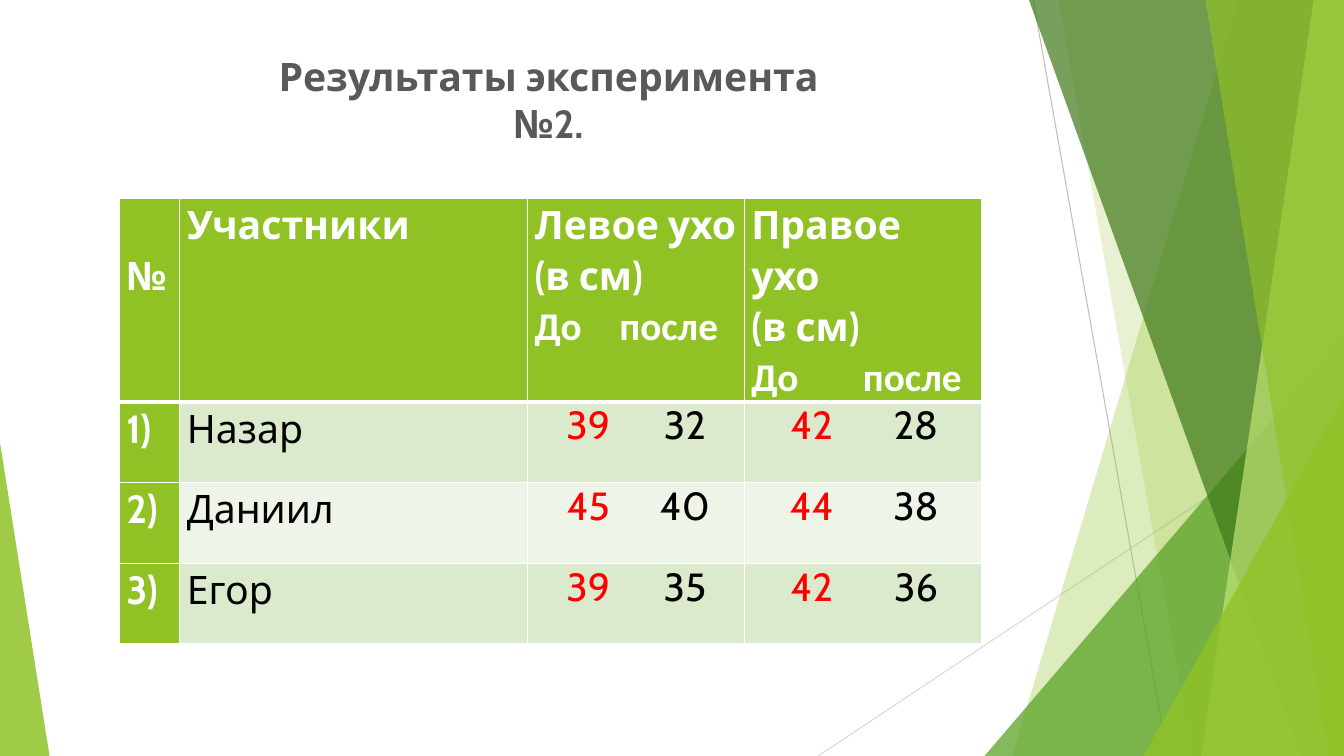
from lxml.etree import SubElement
from pptx import Presentation
from pptx.dml.color import RGBColor
from pptx.enum.shapes import MSO_CONNECTOR, MSO_SHAPE
from pptx.enum.text import PP_ALIGN
from pptx.oxml.ns import qn
from pptx.util import Inches, Pt

COLS, ROWS = 160, 90
UNIT = Inches(1) / 12

WHITE = RGBColor(0xFF, 0xFF, 0xFF)
BLACK = RGBColor(0x00, 0x00, 0x00)
RED = RGBColor(0xFF, 0x00, 0x00)
TITLE_GREY = RGBColor(0x59, 0x59, 0x59)
LINE_GREY = RGBColor(0xBF, 0xBF, 0xBF)
PALE_GREY = RGBColor(0xD9, 0xD9, 0xD9)
LIME = RGBColor(0x90, 0xC2, 0x26)
GREEN = RGBColor(0x54, 0xA0, 0x21)
DARK_GREEN = RGBColor(0x3F, 0x78, 0x19)
LIGHT_LIME = RGBColor(0xC0, 0xE4, 0x74)
BAND_DARK = RGBColor(0xDB, 0xE9, 0xCD)
BAND_LIGHT = RGBColor(0xEE, 0xF4, 0xE8)

TABLE_COLS = (7.2, 41.4, 25.8, 28.2)
TABLE_ROWS = (22, 9.6, 9.6, 9.6)
EARS = (
    ("Левое ухо", 10.1, (6.4, 17.9)),
    ("Правое ухо", 13.3, (7.2, 19.6)),
)
RESULTS = (
    ("Назар", (39, 32), (42, 28)),
    ("Даниил", (45, 40), (44, 38)),
    ("Егор", (39, 35), (42, 36)),
)


def grid(*units):
    """Turn grid units into slide lengths."""
    return [round(n * UNIT) for n in units]


def paint(sp, color, opacity):
    """Give a shape a translucent fill without line or shadow."""
    sp.shadow.inherit = False
    sp.line.fill.background()
    sp.fill.solid()
    sp.fill.fore_color.rgb = color
    clr = sp.fill._xPr.find(qn("a:solidFill"))[0]
    SubElement(clr, qn("a:alpha"), val=str(opacity * 1000))


def add_line(s, ends, color):
    """Draw a thin straight line."""
    line = s.shapes.add_connector(MSO_CONNECTOR.STRAIGHT, *grid(*ends))
    line.line.color.rgb = color
    line.line.width = Pt(0.75)
    SubElement(line._element.spPr, qn("a:effectLst"))


def add_facet(s, top_x, bottom_x, color, opacity):
    """Fill the area right of a slanted full-height edge."""
    builder = s.shapes.build_freeform(*grid(top_x, 0), scale=1.0)
    corners = ((COLS, 0), (COLS, ROWS), (bottom_x, ROWS))
    builder.add_line_segments([grid(*c) for c in corners], close=True)
    paint(builder.convert_to_shape(), color, opacity)


def add_triangle(s, left, top, right, apex, color, opacity):
    """Draw a right triangle standing on the slide's bottom edge."""
    box = grid(left, top, right - left, ROWS - top)
    sp = s.shapes.add_shape(MSO_SHAPE.ISOSCELES_TRIANGLE, *box)
    sp.adjustments[0] = apex
    paint(sp, color, opacity)


def add_run(p, text, color, bold=False, font="Cabin"):
    """Append one formatted run."""
    r = p.add_run()
    r.text = text
    r.font.size = Pt(28)
    r.font.name = font
    r.font.bold = bold
    r.font.color.rgb = color


def add_tabs(p, stops, align):
    """Set tab stops on a paragraph."""
    tabs = SubElement(p._p.get_or_add_pPr(), qn("a:tabLst"))
    for pos in grid(*stops):
        SubElement(tabs, qn("a:tab"), pos=str(pos), algn=align)


def style_cell(cell, color, bottom=1):
    """Set a cell's margins, white borders and fill."""
    cell.margin_left = cell.margin_right = Inches(0.07)
    cell.margin_top = cell.margin_bottom = 0
    tc_pr = cell._tc.get_or_add_tcPr()
    for side, width in (("L", 1), ("R", 1), ("T", 1), ("B", bottom)):
        ln = SubElement(tc_pr, qn(f"a:ln{side}"), w=str(Pt(width)))
        fill = SubElement(ln, qn("a:solidFill"))
        SubElement(fill, qn("a:srgbClr"), val=str(WHITE))
    cell.fill.solid()
    cell.fill.fore_color.rgb = color


def write_label(cell, text, color, bold):
    """Write a single label into a cell."""
    p = cell.text_frame.paragraphs[0]
    p.line_spacing = 1.07
    add_run(p, text, color, bold)


def write_ear_header(cell, ear, after_stop):
    """Write an ear heading with its before and after captions."""
    tf = cell.text_frame
    write_label(cell, ear, WHITE, True)
    for text, font in (("(в см)", "Cabin"), ("До\tпосле", "Calibri")):
        p = tf.add_paragraph()
        p.line_spacing = 1.07
        add_run(p, text, WHITE, True, font)
    add_tabs(p, [after_stop], "l")


def write_pair(cell, values, stops):
    """Write the before and after values centred on their tab stops."""
    p = cell.text_frame.paragraphs[0]
    add_tabs(p, stops, "ctr")
    for value, color in zip(values, (RED, BLACK)):
        add_run(p, f"\t{value}", color)


def add_results(s):
    """Build the results table."""
    box = grid(14.2, 23.6, sum(TABLE_COLS), sum(TABLE_ROWS))
    table = s.shapes.add_table(len(TABLE_ROWS), len(TABLE_COLS), *box).table
    for col, width in zip(table.columns, grid(*TABLE_COLS)):
        col.width = width
    for row, height in zip(table.rows, grid(*TABLE_ROWS)):
        row.height = height

    for i in range(len(TABLE_COLS)):
        style_cell(table.cell(0, i), LIME, bottom=3)
    write_label(table.cell(0, 0), "№", WHITE, True)
    table.cell(0, 0).margin_top = Inches(0.51)
    write_label(table.cell(0, 1), "Участники", WHITE, True)
    for i, (ear, after_stop, _) in enumerate(EARS, 2):
        write_ear_header(table.cell(0, i), ear, after_stop)

    for n, (name, *pairs) in enumerate(RESULTS, 1):
        band = BAND_DARK if n % 2 else BAND_LIGHT
        for i in range(len(TABLE_COLS)):
            style_cell(table.cell(n, i), band if i else LIME)
        write_label(table.cell(n, 0), f"{n})", WHITE, True)
        write_label(table.cell(n, 1), name, BLACK, False)
        for i, (pair, ear) in enumerate(zip(pairs, EARS), 2):
            write_pair(table.cell(n, i), pair, ear[2])


def add_title(s):
    """Add the centred heading."""
    tf = s.shapes.add_textbox(*grid(28.9, 5.6, 72.8, 10.1)).text_frame
    tf.word_wrap = True
    p = tf.paragraphs[0]
    p.alignment = PP_ALIGN.CENTER
    add_run(p, "Результаты эксперимента №2.", TITLE_GREY, True)


def add_backdrop(s):
    """Draw the green facets along the slide's edges."""
    add_line(s, (123, 0, 139, ROWS), LINE_GREY)
    add_line(s, (COLS, 48.4, 97.4, ROWS), PALE_GREY)
    add_facet(s, 147.4, 120.5, LIME, 30)
    add_facet(s, 126, 142, LIME, 20)
    add_triangle(s, 117.2, 40, COLS, 1, GREEN, 72)
    add_facet(s, 122.5, 154.9, DARK_GREEN, 70)
    add_facet(s, 156.4, 143, LIGHT_LIME, 70)
    add_facet(s, 143.5, 158.2, LIME, 65)
    add_triangle(s, 136.1, 47.2, COLS, 1, LIME, 80)
    add_triangle(s, 0, 52.7, 5.9, 0, LIME, 85)


def main():
    """Build and save the slide."""
    prs = Presentation()
    prs.slide_width, prs.slide_height = grid(COLS, ROWS)
    s = prs.slides.add_slide(prs.slide_layouts[6])
    add_backdrop(s)
    add_results(s)
    add_title(s)
    prs.save("out.pptx")


if __name__ == "__main__":
    main()
